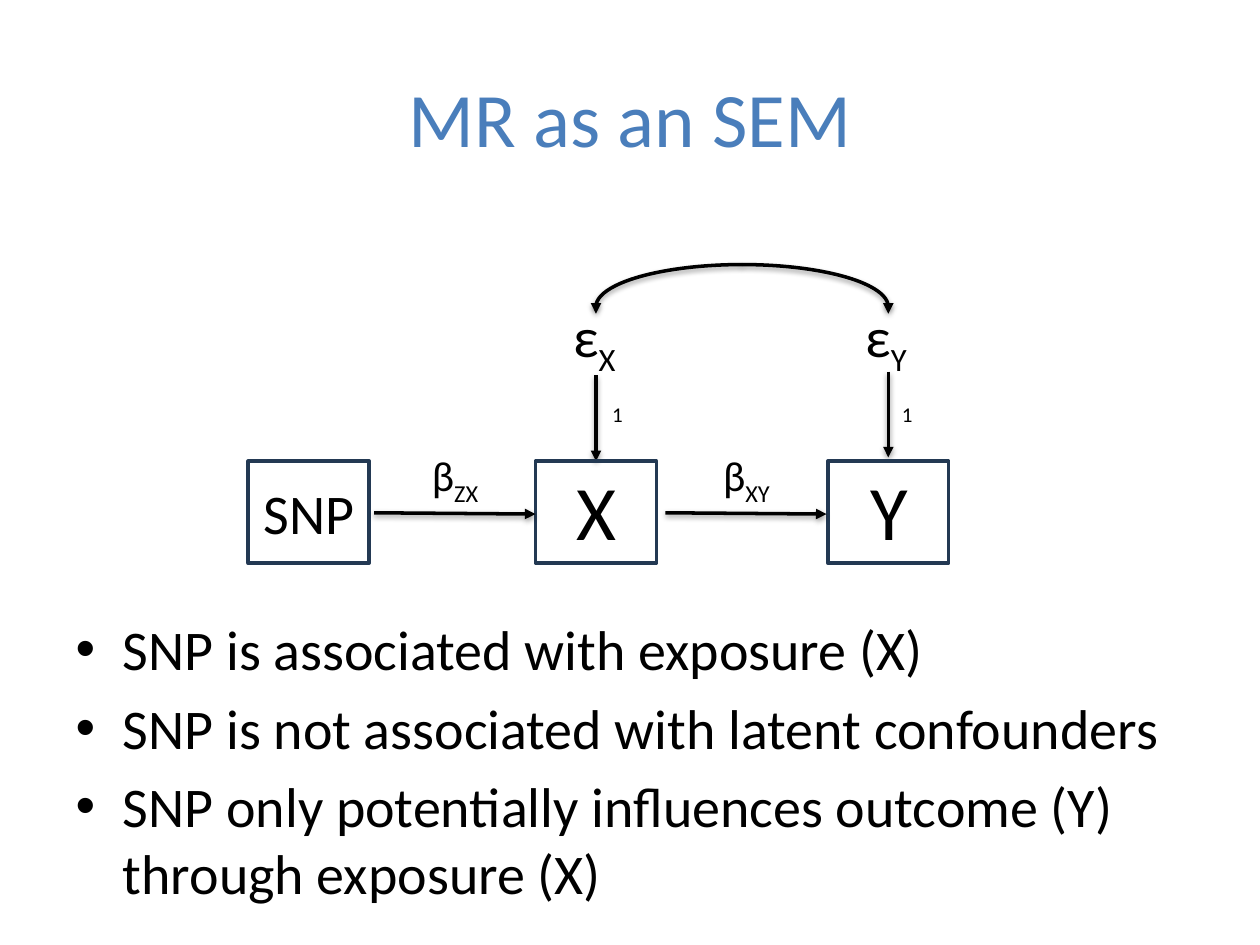
from lxml import etree
from pptx import Presentation
from pptx.dml.color import RGBColor
from pptx.enum.shapes import MSO_CONNECTOR, MSO_SHAPE
from pptx.enum.text import MSO_ANCHOR, MSO_AUTO_SIZE, PP_ALIGN
from pptx.oxml.ns import qn
from pptx.util import Pt

PX = 9144
FONT = "Calibri"
COLORS = {"title": "4A7EBB", "ink": "000000", "border": "233953"}
RECT, ARC = MSO_SHAPE.RECTANGLE, MSO_SHAPE.ARC
STRAIGHT = MSO_CONNECTOR.STRAIGHT
CENTER, LEFT = PP_ALIGN.CENTER, PP_ALIGN.LEFT
MIDDLE = MSO_ANCHOR.MIDDLE
FIT = MSO_AUTO_SIZE.SHAPE_TO_FIT_TEXT


class PathDiagram:
    """Draw titles, lists and path-diagram parts on one slide."""

    def __init__(self, prs):
        self.slide = prs.slides.add_slide(prs.slide_layouts[1])
        self.shapes = self.slide.shapes

    def color(self, name):
        return RGBColor.from_string(COLORS[name])

    def place(self, sp, x, y, w, h):
        sp.left, sp.top, sp.width, sp.height = (v * PX for v in (x, y, w, h))

    def style(self, p, size, color="ink"):
        for r in p.runs:
            r.font.name = FONT
            r.font.size = Pt(size)
            r.font.color.rgb = self.color(color)

    def stroke(self, sp, color):
        sp.line.color.rgb = self.color(color)
        sp.line.width = Pt(2)

    def shadow(self, sp):
        effects = etree.SubElement(sp._element.spPr, qn("a:effectLst"))
        outer = etree.SubElement(effects, qn("a:outerShdw"), blurRad="40000",
                                 dist="20000", dir="5400000", rotWithShape="0")
        black = etree.SubElement(outer, qn("a:srgbClr"), val=COLORS["ink"])
        etree.SubElement(black, qn("a:alpha"), val="38000")

    def title(self, text, x, y, w, h):
        sp = self.shapes.title
        self.place(sp, x, y, w, h)
        tf = sp.text_frame
        tf.text = text
        tf.vertical_anchor = MIDDLE
        tf.paragraphs[0].alignment = CENTER
        self.style(tf.paragraphs[0], 44, "title")

    def bullets(self, items, x, y, w, h):
        sp = self.slide.placeholders[1]
        self.place(sp, x, y, w, h)
        tf = sp.text_frame
        tf.text = "\n".join(items)
        for p in tf.paragraphs:
            self.style(p, 32)

    def text(self, text, x, y, w, h, size, sub="", align=LEFT, wrap=False):
        sp = self.shapes.add_textbox(*(v * PX for v in (x, y, w, h)))
        tf = sp.text_frame
        tf.word_wrap = wrap
        tf.auto_size = FIT
        tf.text = text
        p = tf.paragraphs[0]
        p.alignment = align
        if sub:
            r = p.add_run()
            r.text = sub
            r.font._element.set("baseline", "-25000")
        self.style(p, size)

    def box(self, text, x, y, size, text_y, text_h):
        sp = self.shapes.add_shape(RECT, x * PX, y * PX, 96 * PX, 81 * PX)
        sp.fill.background()
        self.stroke(sp, "border")
        sp.shadow.inherit = False
        self.text(text, x - 5, text_y, 107, text_h, size, align=CENTER, wrap=True)

    def arc(self, x, y, w, h, flip):
        sp = self.shapes.add_shape(ARC, *(v * PX for v in (x, y, w, h)))
        sp.fill.background()
        self.stroke(sp, "ink")
        self.shadow(sp)
        if flip:
            sp._element.spPr.xfrm.set("flipH", "1")

    def arrow(self, x1, y1, x2, y2):
        line = self.shapes.add_connector(STRAIGHT, *(v * PX for v in (x1, y1, x2, y2)))
        self.stroke(line, "ink")
        etree.SubElement(line.line._get_or_add_ln(), qn("a:tailEnd"), type="triangle")
        self.shadow(line)


def main():
    prs = Presentation()
    prs.slide_width, prs.slide_height = 1000 * PX, 750 * PX
    d = PathDiagram(prs)
    d.title("MR as an SEM", 50, 30, 900, 125)
    x_axis, y_axis = 473, 705

    for flip in (True, False):
        d.arc(x_axis, 210, y_axis - x_axis, 67, flip)
    for axis, name, arc_end, stem, one in ((x_axis, "X", 244, 298, 476),
                                           (y_axis, "Y", 242, 295, 706)):
        d.arrow(axis, arc_end, axis, 249)
        d.arrow(axis, stem, axis, stem + 68)
        d.text("ε", axis - 28, 234, 56, 64, 32, sub=name)
        d.text("1", one, 314, 29, 30, 12)

    d.box("SNP", 197, 366, 32, 375, 64)
    for name, left in (("X", 425), ("Y", 657)):
        d.box(name, left, 366, 44, 363, 84)
    for sub, start, label in (("ZX", 297, 333), ("XY", 528, 564)):
        d.arrow(start, 407, start + 128, 408)
        d.text("β", label, 352, 60, 50, 24, sub=sub)

    d.bullets(["SNP is associated with exposure (X)",
               "SNP is not associated with latent confounders",
               "SNP only potentially influences outcome (Y) through exposure (X)"],
              50, 483, 900, 237)
    prs.save("out.pptx")


if __name__ == "__main__":
    main()
